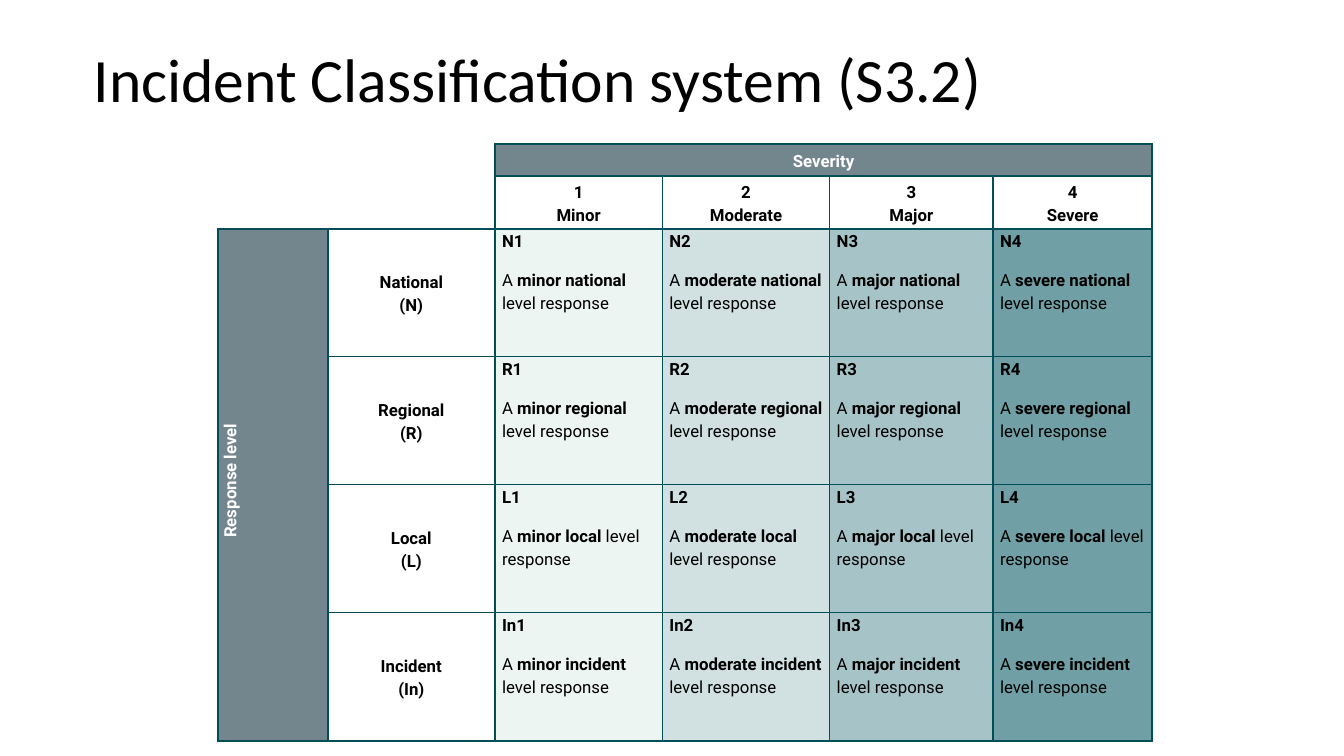
from lxml.etree import SubElement as Sub
from pptx import Presentation
from pptx.dml.color import RGBColor as Rgb
from pptx.enum.text import MSO_ANCHOR as Anchor, PP_ALIGN as Align
from pptx.oxml.ns import qn
from pptx.util import Inches, Pt

WIDTHS = [1.09, 1.66, 1.66, 1.66, 1.62, 1.58]
HEIGHTS = [0.32, 0.52] + [1.27] * 4
LEVELS = [("National", "N"), ("Regional", "R"), ("Local", "L"), ("Incident", "In")]
GRADES = [("Minor", "EDF5F2"), ("Moderate", "D1E0E0"),
          ("Major", "A6C4C7"), ("Severe", "70A0A5")]
EDGE, SLATE, WHITE, BLACK = "004F58", "73868E", "FFFFFF", "000000"
BREAK = "\n"
INSETS = {"margin_left": Inches(0.07), "margin_right": Inches(0.07),
          "margin_top": 0, "margin_bottom": 0}
SPACING = {"line_spacing": 1.15, "space_before": Pt(6), "space_after": Pt(6)}


def color(code):
    return Rgb.from_string(code)


def apply(item, values):
    for name, value in values.items():
        setattr(item, name, value)


def add_text(para, parts, tint, font):
    for text, bold in parts:
        if text == BREAK:
            para.add_line_break()
            continue
        run = para.add_run()
        run.text = text
        apply(run.font, {**font, "bold": bold})
        run.font.color.rgb = color(tint)


def write(cell, paras, tint=BLACK, align=Align.CENTER, anchor=Anchor.MIDDLE):
    cell.vertical_anchor = anchor
    frame = cell.text_frame
    for i, parts in enumerate(paras):
        para = frame.add_paragraph() if i else frame.paragraphs[0]
        apply(para, {**SPACING, "alignment": align})
        add_text(para, parts, tint, {"name": "Roboto", "size": Pt(12)})


def weight(line, across, first):
    if across < 2 and line < first:
        return 0
    return 1.5 if line in (0, 1, 2, 6) else 1


def draw_edge(props, side, points):
    line = Sub(props, qn("a:ln" + side), w=str(Pt(points)))
    if points:
        Sub(Sub(line, qn("a:solidFill")), qn("a:srgbClr"), val=EDGE)
    else:
        Sub(line, qn("a:noFill"))


def set_up(cell, row, col, high=1, wide=1):
    apply(cell, INSETS)
    props = cell._tc.get_or_add_tcPr()
    edges = {"L": weight(col, row, 2), "R": weight(col + wide, row, 2),
             "T": weight(row, col, 2), "B": weight(row + high, col, 2)}
    for side, points in edges.items():
        draw_edge(props, side, points)


def paint(cell, code):
    cell.fill.solid()
    cell.fill.fore_color.rgb = color(code)


def add_title(slide, text):
    box = slide.shapes.add_textbox(Inches(0.83), Inches(0.09), Inches(11.5), Inches(1.45))
    frame = box.text_frame
    apply(frame, {"word_wrap": True, "vertical_anchor": Anchor.MIDDLE})
    para = frame.paragraphs[0]
    para.line_spacing = 0.9
    add_text(para, [(text, False)], BLACK, {"name": "Calibri", "size": Pt(44)})


def add_grid(slide):
    shape = slide.shapes.add_table(6, 6, Inches(2.16), Inches(1.43),
                                   Inches(sum(WIDTHS)), Inches(sum(HEIGHTS)))
    table = shape.table
    apply(table, {"first_row": False, "horz_banding": False})
    for col, width in zip(table.columns, WIDTHS):
        col.width = Inches(width)
    for row, height in zip(table.rows, HEIGHTS):
        row.height = Inches(height)
    table.cell(0, 2).merge(table.cell(0, 5))
    table.cell(2, 0).merge(table.cell(5, 0))
    for row in range(6):
        for col in range(6):
            cell = table.cell(row, col)
            high = 4 if (row, col) == (2, 0) else 1
            wide = 4 if (row, col) == (0, 2) else 1
            if not cell.is_spanned:
                set_up(cell, row, col, high, wide)
            else:
                apply(cell, INSETS)
            cell.fill.background()
    return table


def fill_heads(table):
    for row, col, text in [(0, 2, "Severity"), (2, 0, "Response level")]:
        cell = table.cell(row, col)
        anchor = Anchor.TOP if row else Anchor.MIDDLE
        write(cell, [[(text, True)]], WHITE, anchor=anchor)
        paint(cell, SLATE)
    side = table.cell(2, 0)
    side._tc.get_or_add_tcPr().set("vert", "vert270")
    side.text_frame.paragraphs[0]._p.get_or_add_pPr().set("marL", str(Inches(0.08)))
    for i, (grade, _) in enumerate(GRADES, 1):
        write(table.cell(1, i + 1), [[(str(i), True), (BREAK, True), (grade, True)]])


def fill_body(table):
    for row, (level, code) in enumerate(LEVELS, 2):
        write(table.cell(row, 1), [[(level, True), (BREAK, True), (f"({code})", True)]])
        for i, (grade, shade) in enumerate(GRADES, 1):
            cell = table.cell(row, i + 1)
            label = f"{grade} {level}".lower()
            paras = [[(f"{code}{i}", True)],
                     [("A ", False), (label, True), (" level response", False)]]
            write(cell, paras, align=Align.LEFT, anchor=Anchor.TOP)
            paint(cell, shade)


def shrink_blanks(table):
    for cell in table.iter_cells():
        if not cell.text:
            Sub(cell.text_frame.paragraphs[0]._p, qn("a:endParaRPr"), sz="1200")


def main():
    deck = Presentation()
    apply(deck, {"slide_width": Inches(13.33), "slide_height": Inches(7.5)})
    slide = deck.slides.add_slide(deck.slide_layouts[6])
    add_title(slide, "Incident Classification system (S3.2)")
    table = add_grid(slide)
    fill_heads(table)
    fill_body(table)
    shrink_blanks(table)
    deck.save("out.pptx")


if __name__ == "__main__":
    main()
